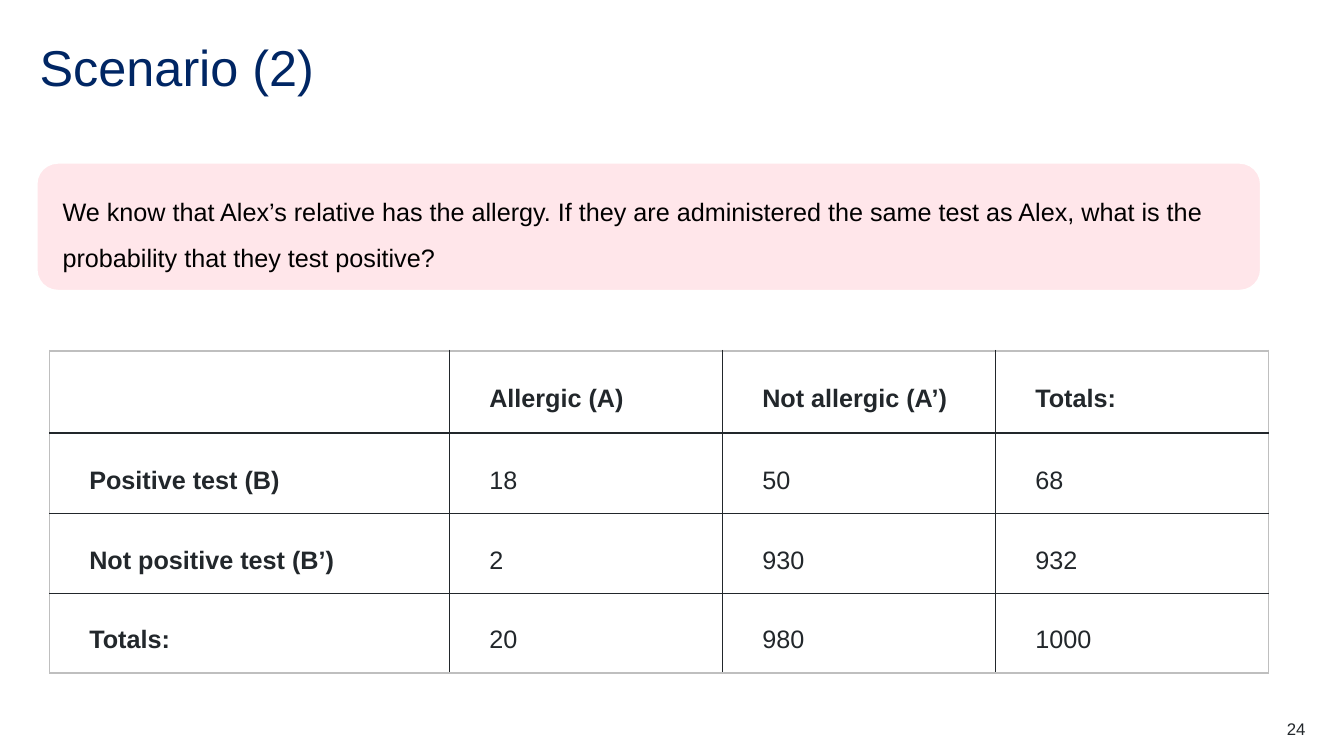
from lxml.etree import SubElement
from pptx import Presentation
from pptx.dml.color import RGBColor as RGB
from pptx.enum.shapes import MSO_SHAPE as SHAPE
from pptx.enum.text import MSO_ANCHOR as ANCHOR, PP_ALIGN as ALIGN
from pptx.oxml.ns import qn
from pptx.util import Cm, Pt

NAVY = RGB(0x00, 0x26, 0x64)
PINK = RGB(0xFF, 0xE6, 0xEA)
INK = RGB(0x22, 0x27, 0x2B)
GREY = RGB(0xBF, 0xBF, 0xBF)
BLACK = RGB(0, 0, 0)
WHITE = RGB(255, 255, 255)

ROWS = [
    ["", "Allergic (A)", "Not allergic (A’)", "Totals:"],
    ["Positive test (B)", "18", "50", "68"],
    ["Not positive test (B’)", "2", "930", "932"],
    ["Totals:", "20", "980", "1000"],
]


def write(frame, text, size=18, color=INK, bold=False, align=ALIGN.LEFT,
          line=1.0, before=0, after=0):
    frame.word_wrap = True
    par = frame.paragraphs[0]
    par.alignment, par.line_spacing = align, line
    par.space_before, par.space_after = Pt(before), Pt(after)
    run = par.add_run()
    run.text = text
    font = run.font
    font.name, font.size, font.bold = "Arial", Pt(size), bold
    font.color.rgb = color


def inset(item, left=0, right=0):
    """Set the margins of a text frame or a cell, with none above or below."""
    item.margin_left, item.margin_right = Cm(left), Cm(right)
    item.margin_top = item.margin_bottom = 0


def edge(cell, side, color, width):
    """Draw one border; side is L, R, T or B."""
    props = cell._tc.get_or_add_tcPr()
    line = SubElement(props, qn(f"a:ln{side}"), w=str(Pt(width)))
    fill = SubElement(line, qn("a:solidFill"))
    SubElement(fill, qn("a:srgbClr"), val=str(color))


def frame_cell(cell, row, col, last):
    """Grey outside edges, dark inside ones, heavier around the header."""
    edge(cell, "L", *((INK, 1) if col else (GREY, 1)))
    edge(cell, "R", *((INK, 1) if col < last else (GREY, 1)))
    tops = [(GREY, 1.5), (INK, 1.5)] + [(INK, 1)] * (len(ROWS) - 2) + [(GREY, 1)]
    edge(cell, "T", *tops[row])
    edge(cell, "B", *tops[row + 1])


def add_title(slide, text, *box):
    title = slide.shapes.title
    title.left, title.top, title.width, title.height = map(Cm, box)
    frame = title.text_frame
    inset(frame)
    frame.vertical_anchor = ANCHOR.MIDDLE
    write(frame, text, size=36, color=NAVY, line=0.9)


def add_panel(slide, text, *box):
    panel = slide.shapes.add_shape(SHAPE.ROUNDED_RECTANGLE, *map(Cm, box))
    panel.shadow.inherit = False
    panel.fill.solid()
    panel.fill.fore_color.rgb = PINK
    panel.line.color.rgb, panel.line.width = WHITE, Pt(1.5)
    frame = panel.text_frame
    inset(frame, 0.5)
    frame.vertical_anchor = ANCHOR.MIDDLE
    write(frame, text, color=BLACK, line=1.5, after=12)


def add_grid(slide, left, top, width, height):
    count = len(ROWS[0])
    table = slide.shapes.add_table(
        len(ROWS), count, Cm(left), Cm(top), Cm(width), Cm(height)).table
    first, head = 10.08, 2.08
    for i, col in enumerate(table.columns):
        col.width = Cm((width - first) / (count - 1) if i else first)
    for i, row in enumerate(table.rows):
        row.height = Cm((height - head) / (len(ROWS) - 1) if i else head)
    for r, texts in enumerate(ROWS):
        for c, text in enumerate(texts):
            cell = table.cell(r, c)
            inset(cell, 1, 0.18)
            cell.vertical_anchor = ANCHOR.MIDDLE
            frame_cell(cell, r, c, count - 1)
            cell.fill.background()
            if text:
                write(cell.text_frame, text, bold=not (r and c),
                      line=1.5, before=12, after=6)


def add_number(slide, text, *box):
    frame = slide.shapes.add_textbox(*map(Cm, box)).text_frame
    inset(frame)
    write(frame, text, size=12, align=ALIGN.RIGHT)


def main():
    deck = Presentation()
    deck.slide_width, deck.slide_height = Cm(33.87), Cm(19.05)
    slide = deck.slides.add_slide(deck.slide_layouts[5])
    add_title(slide, "Scenario (2)", 1, 1, 31.9, 1.52)
    add_panel(slide, "We know that Alex’s relative has the allergy. If they are "
              "administered the same test as Alex, what is the probability "
              "that they test positive?", 0.92, 4.1, 30.86, 3.23)
    add_grid(slide, 1.25, 8.84, 30.72, 8.12)
    add_number(slide, "24", 30.9, 18.1, 2, 0.5)
    deck.save("out.pptx")


if __name__ == "__main__":
    main()
